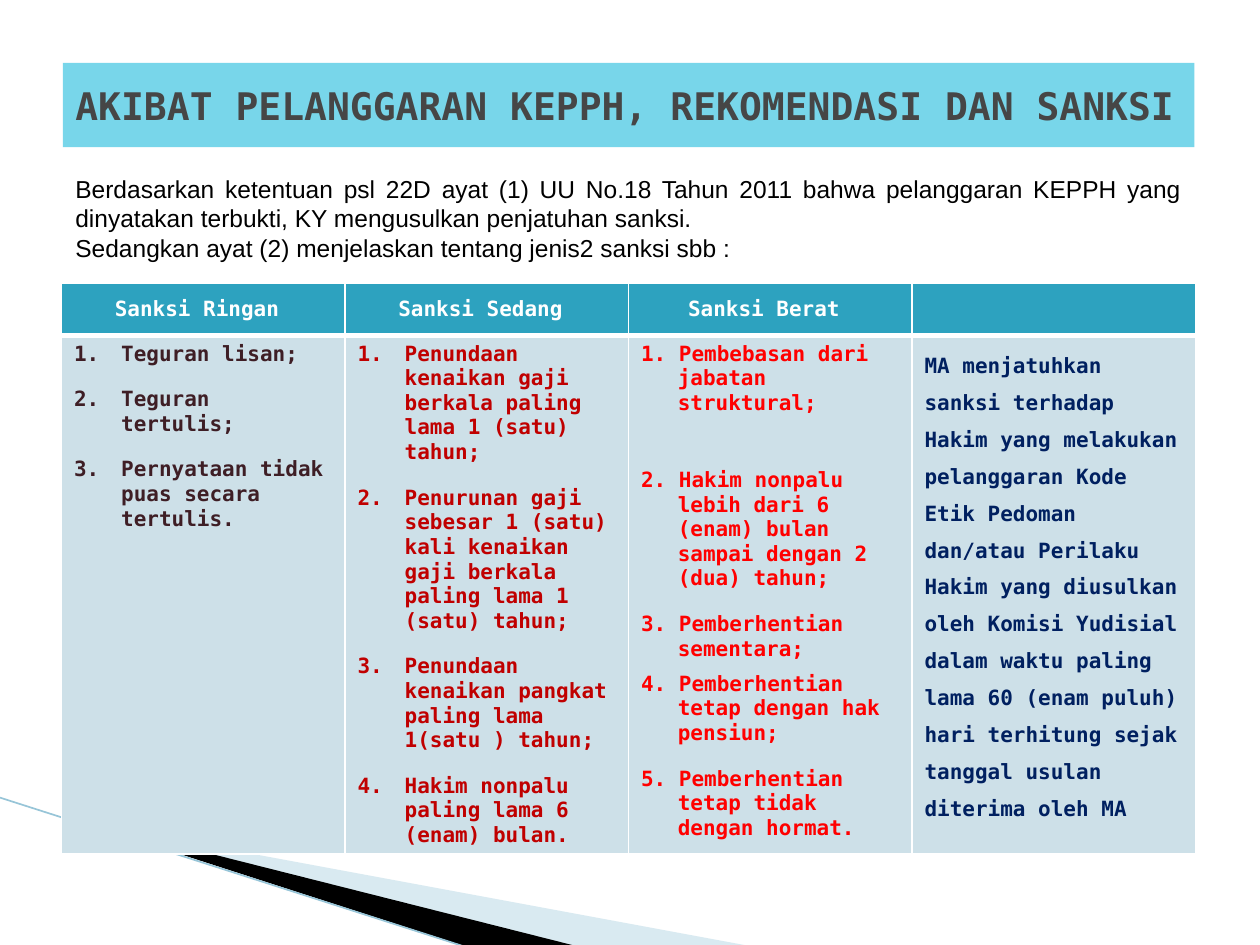
from lxml.etree import SubElement
from pptx import Presentation
from pptx.dml.color import RGBColor
from pptx.enum.shapes import MSO_CONNECTOR as Connector, MSO_SHAPE as Shape
from pptx.enum.text import MSO_ANCHOR as Anchor, PP_ALIGN as Align
from pptx.oxml import parse_xml
from pptx.oxml.ns import nsdecls, qn
from pptx.util import Cm, Pt

WHITE = RGBColor(0xFF, 0xFF, 0xFF)
BLACK = RGBColor(0x00, 0x00, 0x00)
PALE_BLUE = RGBColor(0xA0, 0xCB, 0xDC)
LINE_BLUE = RGBColor(0x97, 0xC5, 0xD8)
TITLE_FILL = RGBColor(0x78, 0xD6, 0xEA)
TITLE_GREY = RGBColor(0x46, 0x46, 0x46)
HEADER_TEAL = RGBColor(0x2D, 0xA2, 0xBF)
BODY_FILL = RGBColor(0xCD, 0xE0, 0xE8)
BROWN = RGBColor(0x3E, 0x1E, 0x25)
DARK_RED = RGBColor(0xC0, 0x00, 0x00)
RED = RGBColor(0xFF, 0x00, 0x00)
NAVY = RGBColor(0x00, 0x20, 0x60)

MONO = "DejaVu Sans Mono"
TITLE = "AKIBAT PELANGGARAN KEPPH, REKOMENDASI DAN SANKSI"
INTRO = [
    "Berdasarkan ketentuan psl 22D ayat (1) UU No.18 Tahun 2011 bahwa pelanggaran KEPPH "
    "yang dinyatakan terbukti, KY mengusulkan penjatuhan sanksi.",
    "Sedangkan ayat (2) menjelaskan tentang jenis2 sanksi sbb :",
]
HEADERS = ["Sanksi Ringan ", "Sanksi Sedang ", "Sanksi Berat ", ""]
LIGHT = ["Teguran lisan;", "Teguran tertulis;", "Pernyataan tidak puas secara tertulis."]
MEDIUM = [
    "Penundaan kenaikan gaji berkala paling lama 1 (satu) tahun;",
    "Penurunan gaji sebesar 1 (satu) kali kenaikan gaji berkala paling lama 1 (satu) tahun;",
    "Penundaan kenaikan pangkat paling lama 1(satu ) tahun;",
    "Hakim nonpalu paling lama 6 (enam) bulan.",
]
HEAVY = [
    "1. Pembebasan dari jabatan struktural;",
    "2. Hakim nonpalu lebih dari 6 (enam) bulan sampai dengan 2 (dua) tahun;",
    "3. Pemberhentian sementara;",
    "4. Pemberhentian tetap dengan hak pensiun;",
    "5. Pemberhentian tetap tidak dengan hormat.",
]
HEAVY_GAPS = [0, 12, 12, 6, 12]
DECISION = (
    "MA menjatuhkan sanksi terhadap Hakim yang melakukan pelanggaran Kode Etik Pedoman "
    "dan/atau Perilaku Hakim yang diusulkan oleh Komisi Yudisial dalam waktu paling lama 60 "
    "(enam puluh) hari terhitung sejak tanggal usulan diterima oleh MA"
)


def style(paragraph, font_name, size, color, bold=False):
    for run in paragraph.runs:
        run.font.name = font_name
        run.font.size = Pt(size)
        run.font.color.rgb = color
        run.font.bold = bold


def hang(paragraph, indent, numbered):
    properties = paragraph._p.get_or_add_pPr()
    properties.set("marL", str(indent))
    properties.set("indent", str(-indent))
    if numbered:
        SubElement(properties, qn("a:buFont"), typeface="+mj-lt")
        SubElement(properties, qn("a:buAutoNum"), type="arabicPeriod")


def add_wedge(slide, left, top, corners, color, alpha=None):
    points = [(left + Cm(x), top + Cm(y)) for x, y in corners]
    builder = slide.shapes.build_freeform(*points[0], scale=1.0)
    builder.add_line_segments(points[1:], close=True)
    wedge = builder.convert_to_shape()
    wedge.shadow.inherit = False
    wedge.fill.solid()
    wedge.fill.fore_color.rgb = color
    wedge.line.fill.background()
    if alpha:
        tint = wedge._element.spPr.find(qn("a:solidFill"))[0]
        SubElement(tint, qn("a:alpha"), val=str(alpha * 1000))


def add_corner_sweep(slide, left, top):
    add_wedge(slide, left, top, [(1.4, 0.45), (15.11, 2.99), (11.58, 2.99)], PALE_BLUE, 40)
    add_wedge(slide, left, top, [(1.35, 0.4), (11.61, 2.99), (9.45, 3.02)], BLACK)
    edge = slide.shapes.add_connector(
        Connector.STRAIGHT, left, top, left + Cm(9.42), top + Cm(3.02))
    edge.line.color.rgb = LINE_BLUE
    edge.line.width = Pt(0.95)
    SubElement(edge._element.spPr, qn("a:effectLst"))


def add_title(slide, left, top, width, height):
    banner = slide.shapes.add_shape(Shape.RECTANGLE, left, top, width, height)
    banner.shadow.inherit = False
    banner.fill.solid()
    banner.fill.fore_color.rgb = TITLE_FILL
    banner.line.fill.background()
    frame = banner.text_frame
    frame.word_wrap = True
    frame.vertical_anchor = Anchor.MIDDLE
    frame.text = TITLE
    frame.paragraphs[0].alignment = Align.LEFT
    style(frame.paragraphs[0], MONO, 21.7, TITLE_GREY, True)


def add_intro(slide, left, top, width, height):
    frame = slide.shapes.add_textbox(left, top, width, height).text_frame
    frame.word_wrap = True
    frame.text = "\n".join(INTRO)
    for paragraph in frame.paragraphs:
        paragraph.alignment = Align.JUSTIFY
        style(paragraph, "Arial", 14, BLACK)


def paint_cell(cell, color, bottom_width):
    cell.fill.solid()
    cell.fill.fore_color.rgb = color
    properties = cell._tc.get_or_add_tcPr()
    widths = {"lnL": 1, "lnR": 1, "lnT": 1, "lnB": bottom_width}
    for position, (side, width) in enumerate(widths.items()):
        properties.insert(position, parse_xml(
            f'<a:{side} {nsdecls("a")} w="{Pt(width)}"><a:solidFill>'
            f'<a:srgbClr val="{WHITE}"/></a:solidFill></a:{side}>'))


def fill_list(cell, items, color, indent, gaps, numbered):
    cell.text_frame.text = "\n".join(items)
    for paragraph, gap in zip(cell.text_frame.paragraphs, gaps):
        hang(paragraph, indent, numbered)
        if gap:
            paragraph.space_before = Pt(gap)
        style(paragraph, MONO, 12, color, True)


def add_sanctions(slide, left, top, width, header_height, body_height):
    table = slide.shapes.add_table(
        2, len(HEADERS), left, top, width, header_height + body_height).table
    table.rows[0].height = header_height
    table.rows[1].height = body_height
    for cell, label in zip(table.rows[0].cells, HEADERS):
        paint_cell(cell, HEADER_TEAL, 3)
        cell.vertical_anchor = Anchor.MIDDLE
        cell.text_frame.text = label
        cell.text_frame.paragraphs[0].alignment = Align.CENTER
        style(cell.text_frame.paragraphs[0], MONO, 12, WHITE, True)

    light, medium, heavy, decision = table.rows[1].cells
    for cell in (light, medium, heavy, decision):
        paint_cell(cell, BODY_FILL, 1)
    even_gaps = [0, 12, 12, 12]
    fill_list(light, LIGHT, BROWN, Cm(0.95), even_gaps, True)
    fill_list(medium, MEDIUM, DARK_RED, Cm(0.95), even_gaps, True)
    fill_list(heavy, HEAVY, RED, Cm(0.74), HEAVY_GAPS, False)
    heavy.text_frame.paragraphs[0].space_after = Pt(18)
    decision.text_frame.text = DECISION
    decision.text_frame.paragraphs[0].line_spacing = 1.5
    style(decision.text_frame.paragraphs[0], MONO, 12, NAVY, True)


def main():
    deck = Presentation()
    deck.slide_width, deck.slide_height = Cm(25.4), Cm(19.05)
    slide = deck.slides.add_slide(deck.slide_layouts[6])
    add_corner_sweep(slide, Cm(0), Cm(16.08))
    add_title(slide, Cm(1.27), Cm(1.27), Cm(22.81), Cm(1.7))
    add_sanctions(slide, Cm(1.24), Cm(5.72), Cm(22.86), Cm(1.04), Cm(10.41))
    add_intro(slide, Cm(1.27), Cm(3.38), Cm(22.81), Cm(2.06))
    deck.save("out.pptx")


if __name__ == "__main__":
    main()
